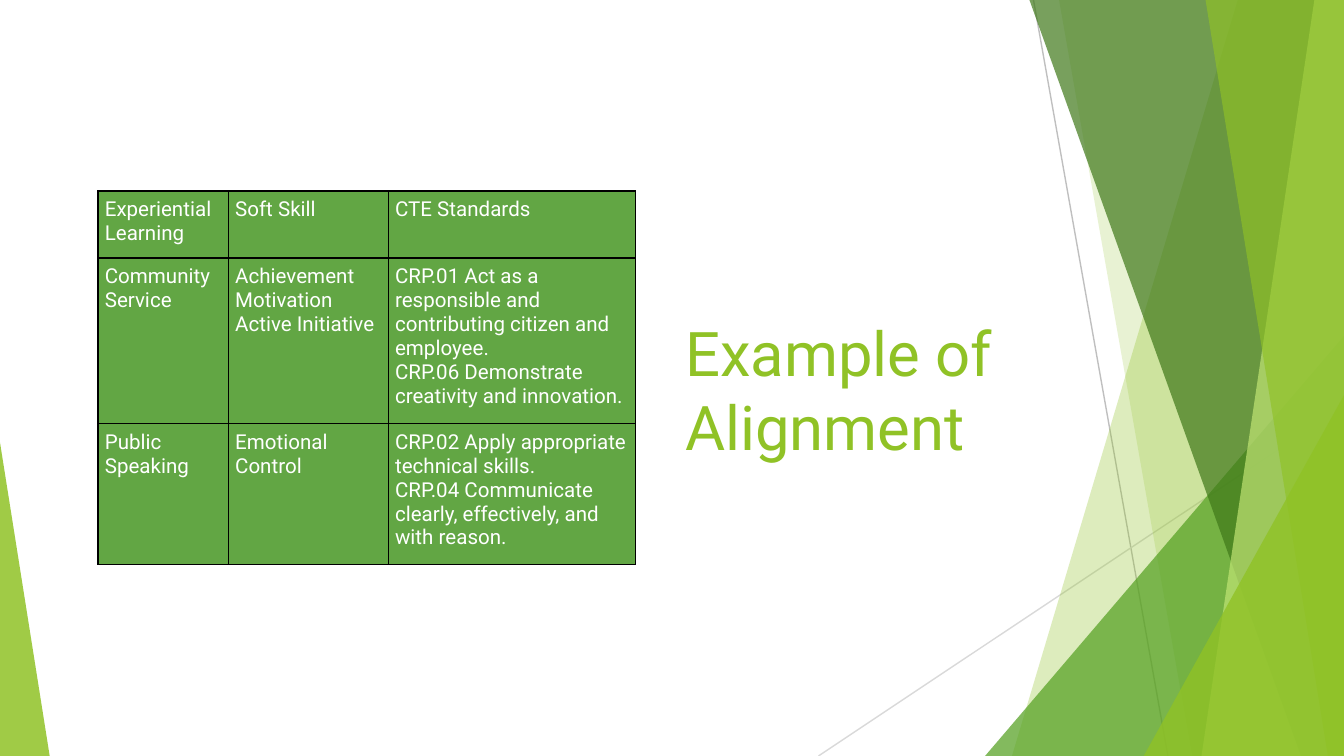
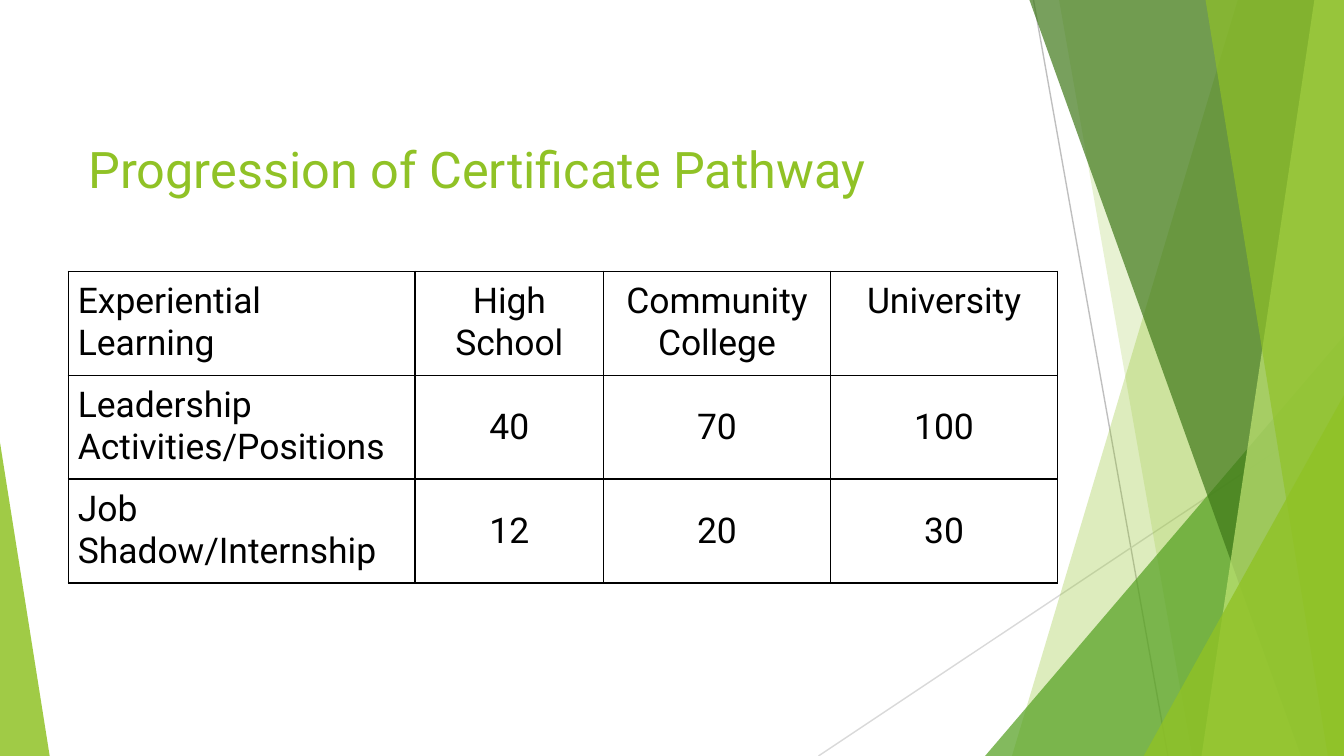
from lxml import etree
from pptx import Presentation
from pptx.dml.color import RGBColor
from pptx.enum.shapes import MSO_CONNECTOR, MSO_SHAPE
from pptx.enum.text import MSO_ANCHOR, PP_ALIGN
from pptx.oxml.ns import qn
from pptx.util import Inches, Pt

STRAIGHT = MSO_CONNECTOR.STRAIGHT
TRIANGLE = MSO_SHAPE.ISOSCELES_TRIANGLE
TOP, MIDDLE, BOTTOM = MSO_ANCHOR.TOP, MSO_ANCHOR.MIDDLE, MSO_ANCHOR.BOTTOM
LEFT, CENTER = PP_ALIGN.LEFT, PP_ALIGN.CENTER

FONT = "Roboto"
LIME, LEAF, FOREST, PALE = "90C226", "54A021", "3F7819", "C0E474"
TABLE_GREEN, WHITE, BLACK = "62A644", "FFFFFF", "000000"

# The slide is a grid of 100 columns; rows are as tall as columns are wide
COLUMNS, ROWS = 100, 56.25


def grid(steps):
    return Inches(steps * 10 / COLUMNS)


def paint(fill, colour):
    fill.solid()
    fill.fore_color.rgb = RGBColor.from_string(colour)


# Backdrop: thin rays, then translucent facets from back to front
rays = [
    (76.9, 0, 86.9, ROWS, "BFBFBF"),
    (COLUMNS, 30.2, 60.9, ROWS, "D9D9D9"),
]
# Panels give top and bottom x of their left edge and run to the right side;
# triangles give left, right, top and apex position and stand on the bottom
facets = [
    ((92.1, 75.3), LIME, 30),
    ((78.8, 88.7), LIME, 20),
    ((73.3, COLUMNS, 25, 1), LEAF, 72),
    ((76.6, 96.8, COLUMNS), FOREST, 70),
    ((97.8, 89.4), PALE, 70),
    ((89.7, 98.8), LIME, 65),
    ((85.1, COLUMNS, 29.4, 1), LIME, 80),
    ((0, 3.7, 32.9, 0), LIME, 85),
]
facets[3] = ((76.6, 96.8), FOREST, 70)

# Content of each slide
pages = [
    {
        "title": "Example of Alignment", "title_size": 33,
        "title_box": (50, 10.3, 28.7, 24.6), "title_inset": 0.5,
        "table_at": (7.3, 14.2), "columns": [9.7, 11.9, 18.4],
        "rows": [5, 12.3, 10.5], "size": 11, "inset": 0.5,
        "bottom_inset": 0.7, "fill": TABLE_GREEN, "ink": WHITE,
        "numeric": False,
        "cells": [
            ["Experiential Learning", "Soft Skill", "CTE Standards"],
            ["Community Service",
             "Achievement Motivation\nActive Initiative",
             "CRP.01 Act as a responsible and contributing citizen and employee.\n"
             "CRP.06 Demonstrate creativity and innovation."],
            ["Public Speaking", "Emotional Control",
             "CRP.02 Apply appropriate technical skills.\n"
             "CRP.04 Communicate clearly, effectively, and with reason."],
        ],
    },
    {
        "title": "Progression of Certificate Pathway", "title_size": 27,
        "title_box": (5.6, 5, 70.5, 10.8), "title_inset": 1,
        "table_at": (5.1, 20.2), "columns": [25.8, 14, 16.9, 16.9],
        "rows": [7.6] * 3, "size": 19, "inset": 0.7,
        "bottom_inset": 0.7, "fill": None, "ink": BLACK,
        "numeric": True,
        "cells": [
            ["Experiential Learning", "High School", "Community College", "University"],
            ["Leadership Activities/Positions", "40", "70", "100"],
            ["Job Shadow/Internship", "12", "20", "30"],
        ],
    },
]

deck = Presentation()
deck.slide_width, deck.slide_height = grid(COLUMNS), grid(ROWS)

for page in pages:
    slide = deck.slides.add_slide(deck.slide_layouts[6])
    shapes = slide.shapes
    paint(slide.background.fill, WHITE)

    # Rays
    for x1, y1, x2, y2, colour in rays:
        ray = shapes.add_connector(STRAIGHT, grid(x1), grid(y1), grid(x2), grid(y2))
        paint(ray.line.fill, colour)
        ray.line.width = Pt(0.75)
        etree.SubElement(ray.element.spPr, qn("a:effectLst"))

    # Facets
    for outline, colour, opacity in facets:
        if len(outline) == 2:
            top_x, bottom_x = outline
            edge = shapes.build_freeform(grid(top_x), 0)
            edge.add_line_segments([
                (grid(COLUMNS), 0), (grid(COLUMNS), grid(ROWS)),
                (grid(bottom_x), grid(ROWS))])
            facet = edge.convert_to_shape()
        else:
            left, right, top, apex = outline
            facet = shapes.add_shape(TRIANGLE, grid(left), grid(top),
                                     grid(right - left), grid(ROWS - top))
            facet.adjustments[0] = apex
        facet.shadow.inherit = False
        facet.line.fill.background()
        paint(facet.fill, colour)
        tint = facet.element.spPr.find(qn("a:solidFill"))[0]
        etree.SubElement(tint, qn("a:alpha"), val=str(opacity * 1000))

    # Title
    title = shapes.add_textbox(*map(grid, page["title_box"])).text_frame
    title.word_wrap = True
    title.vertical_anchor = BOTTOM
    title.margin_top = title.margin_bottom = grid(page["title_inset"])
    title.text = page["title"]
    heading = title.paragraphs[0].font
    heading.name, heading.size = FONT, Pt(page["title_size"])
    paint(heading.fill, LIME)

    # Table
    widths, heights = page["columns"], page["rows"]
    table = shapes.add_table(len(heights), len(widths), *map(grid, page["table_at"]),
                             grid(sum(widths)), grid(sum(heights))).table
    table.first_row = table.horz_banding = False
    for column, width in zip(table.columns, widths):
        column.width = grid(width)
    for row, height in zip(table.rows, heights):
        row.height = grid(height)

    for r, texts in enumerate(page["cells"]):
        for c, text in enumerate(texts):
            cell = table.cell(r, c)
            cell.text = text
            cell.margin_left = cell.margin_right = cell.margin_top = grid(page["inset"])
            cell.margin_bottom = grid(page["bottom_inset"])
            is_value = page["numeric"] and c > 0
            cell.vertical_anchor = MIDDLE if is_value and r > 0 else TOP
            for paragraph in cell.text_frame.paragraphs:
                paragraph.alignment = CENTER if is_value else LEFT
                paragraph.font.name, paragraph.font.size = FONT, Pt(page["size"])
                paint(paragraph.font.fill, page["ink"])

            # Borders come before the fill in the cell properties
            properties = cell._tc.get_or_add_tcPr()
            for side in ("a:lnL", "a:lnR", "a:lnT", "a:lnB"):
                border = etree.SubElement(properties, qn(side), w=str(Pt(1)))
                solid = etree.SubElement(border, qn("a:solidFill"))
                etree.SubElement(solid, qn("a:srgbClr"), val=BLACK)
            if page["fill"]:
                paint(cell.fill, page["fill"])
            else:
                cell.fill.background()

deck.save("out.pptx")
